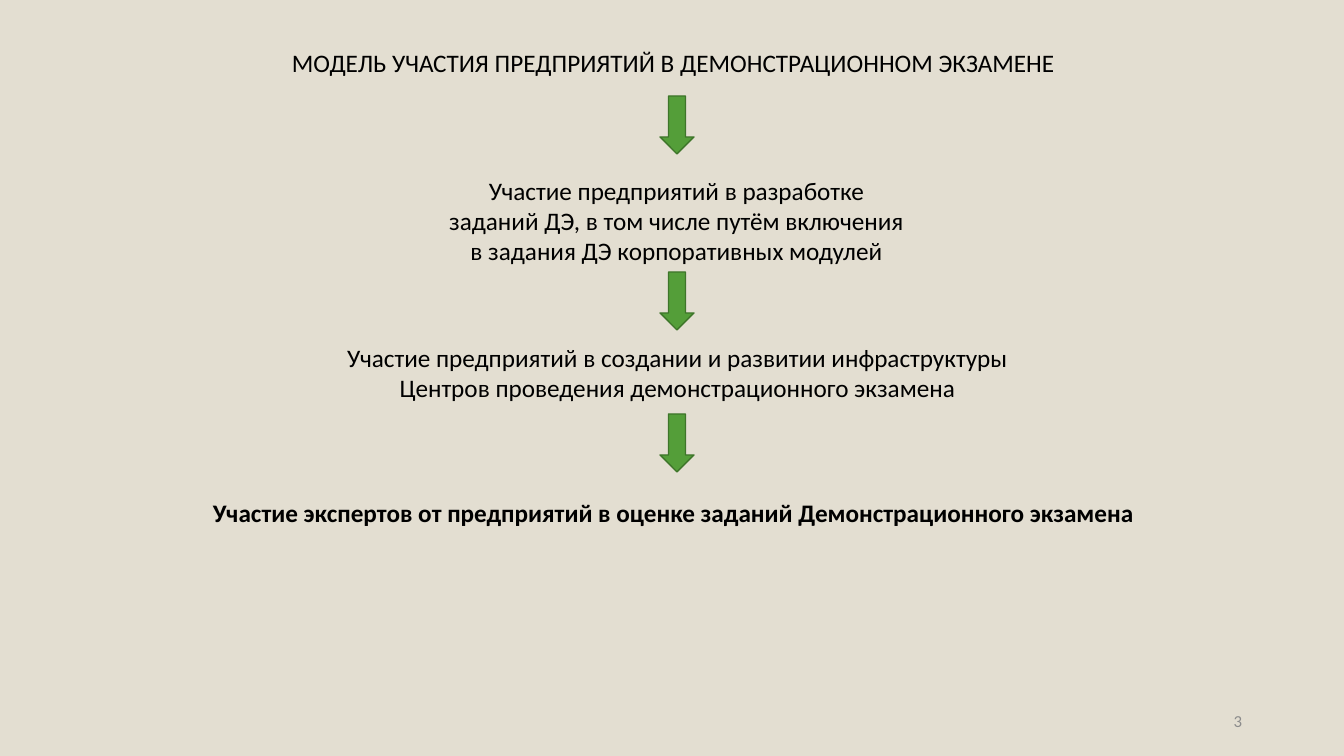
from pptx import Presentation
from pptx.dml.color import RGBColor
from pptx.enum.shapes import MSO_SHAPE
from pptx.enum.text import MSO_ANCHOR, MSO_AUTO_SIZE, PP_ALIGN
from pptx.util import Pt

PX = 914400 / 100.8
FONT = "Calibri"
COLORS = {
    "background": "E3DED1",
    "text": "000000",
    "number": "8C8C8C",
    "arrow": "549E39",
    "arrow_line": "3E752A",
}

# Steps of the model: text, (left, top, width, height), bold, wrapped
STEPS = [
    ("МОДЕЛЬ УЧАСТИЯ ПРЕДПРИЯТИЙ В ДЕМОНСТРАЦИОННОМ ЭКЗАМЕНЕ",
     (282, 42, 790, 40), False, False),
    ("Участие предприятий в разработке заданий ДЭ, в том числе путём "
     "включения в задания ДЭ корпоративных модулей",
     (437, 170, 479, 102), False, True),
    ("Участие предприятий в создании и развитии инфраструктуры "
     "Центров проведения демонстрационного экзамена",
     (318, 337, 719, 72), False, True),
    ("Участие экспертов от предприятий в оценке заданий "
     "Демонстрационного экзамена",
     (203, 492, 950, 40), True, False),
]
ARROW_TOPS = [96, 272, 414]


def px(n):
    return round(n * PX)


def rgb(name):
    return RGBColor.from_string(COLORS[name])


def add_text(s, text, box, size=18, color="text", bold=False, wrap=True,
             align=PP_ALIGN.CENTER):
    sp = s.shapes.add_textbox(*map(px, box))
    tf = sp.text_frame
    tf.word_wrap = wrap
    tf.text = text
    p = tf.paragraphs[0]
    p.alignment = align
    font = p.runs[0].font
    font.name = FONT
    font.size = Pt(size)
    font.bold = bold
    font.color.rgb = rgb(color)
    return tf


def add_down_arrow(s, top):
    sp = s.shapes.add_shape(MSO_SHAPE.DOWN_ARROW,
                            px(660), px(top), px(34), px(58))
    sp.shadow.inherit = False
    sp.fill.solid()
    sp.fill.fore_color.rgb = rgb("arrow")
    sp.line.color.rgb = rgb("arrow_line")
    sp.line.width = Pt(1)


def main():
    prs = Presentation()
    prs.slide_width, prs.slide_height = px(1344), px(756)
    s = prs.slides.add_slide(prs.slide_layouts[6])
    s.background.fill.solid()
    s.background.fill.fore_color.rgb = rgb("background")

    # Slide number
    tf = add_text(s, "3", (950, 701, 302, 40), 12, "number",
                  align=PP_ALIGN.RIGHT)
    tf.vertical_anchor = MSO_ANCHOR.MIDDLE

    # Title and steps: single lines start at the left, wrapped ones are centred
    for text, box, bold, wrap in STEPS:
        align = PP_ALIGN.CENTER if wrap else PP_ALIGN.LEFT
        tf = add_text(s, text, box, bold=bold, wrap=wrap, align=align)
        tf.auto_size = MSO_AUTO_SIZE.SHAPE_TO_FIT_TEXT

    # Arrows between the steps
    for top in ARROW_TOPS:
        add_down_arrow(s, top)

    prs.save("out.pptx")


if __name__ == "__main__":
    main()
